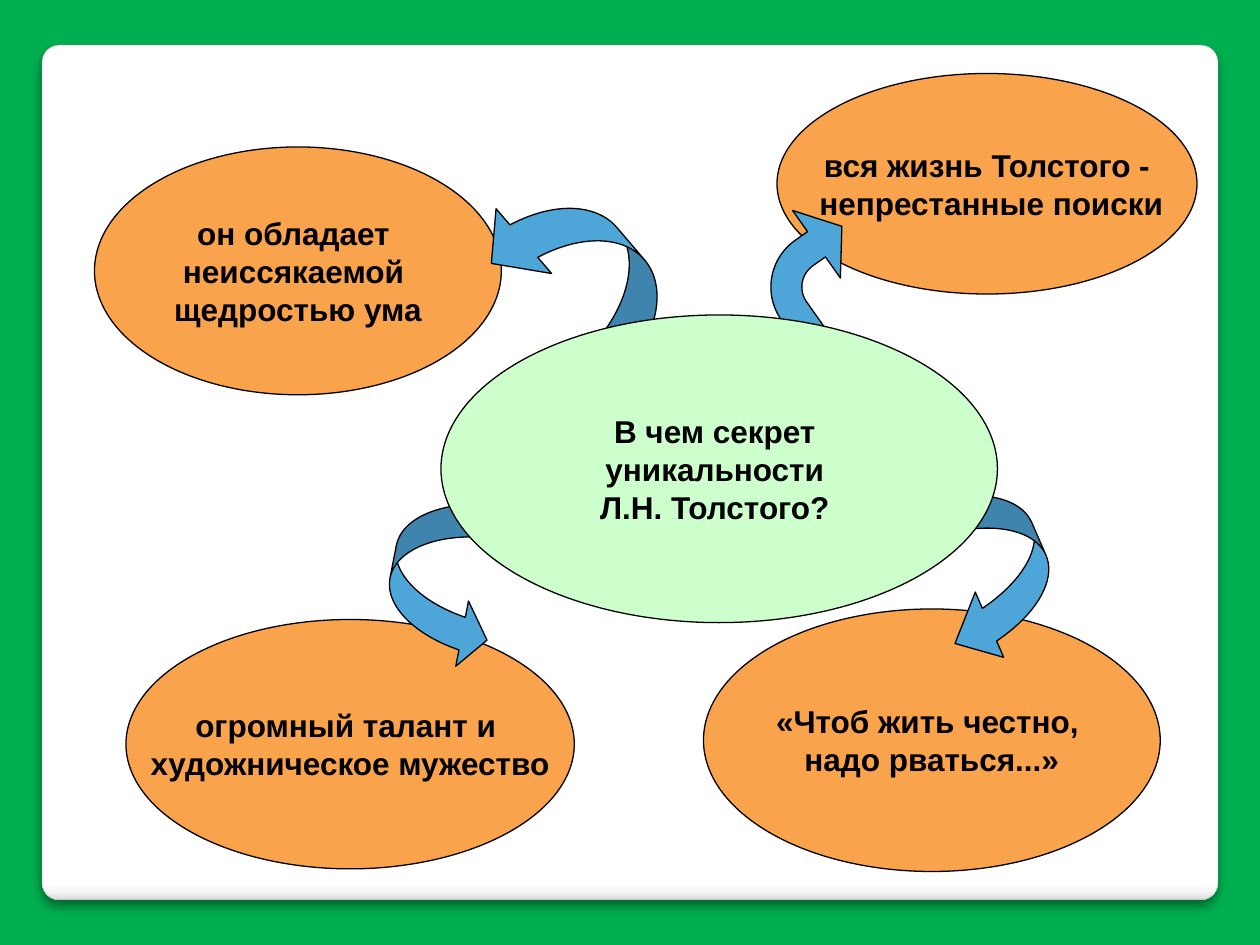
import pptx
import pptx.util
import pptx.oxml
import pptx.oxml.ns
import pptx.dml.color
import pptx.enum.shapes
import pptx.enum.text

THEME = {
    "background": "00B050",
    "card_line": "A4A4A4",
    "card_stops": [(0, "FFFFFF"), (98, "FFFFFF"), (99, "F7F7F7"), (100, "DADADA")],
    "answer": "F9A34D",
    "question": "CCFFCC",
    "arrow": "4EA5D8",
    "ink": "000000",
    "font": "Arial",
    "text_size": 18,
    "line_width": 0.75,
}
COLUMNS, ROWS = 120, 90
SHAPES = pptx.enum.shapes.MSO_SHAPE
color = pptx.dml.color.RGBColor.from_string

presentation = pptx.Presentation()
presentation.slide_width = pptx.util.Inches(10)
presentation.slide_height = pptx.util.Inches(7.5)
slide = presentation.slides.add_slide(presentation.slide_layouts[6])
slide.background.fill.solid()
slide.background.fill.fore_color.rgb = color(THEME["background"])


def add_figure(kind, box, fill, line=THEME["ink"], width=THEME["line_width"], adjustments=(), rotation=0):
    column, row, columns, rows = box
    column_width = presentation.slide_width / COLUMNS
    row_height = presentation.slide_height / ROWS
    shape = slide.shapes.add_shape(
        kind, int(column * column_width), int(row * row_height),
        int(columns * column_width), int(rows * row_height))
    shape.shadow.inherit = False
    shape.fill.solid()
    shape.fill.fore_color.rgb = color(fill)
    shape.line.color.rgb = color(line)
    shape.line.width = pptx.util.Pt(width)
    shape.rotation = rotation
    for index, value in enumerate(adjustments):
        shape.adjustments[index] = value
    return shape


def write_lines(text, shape, size=THEME["text_size"], ink=THEME["ink"], bold=True):
    frame = shape.text_frame
    frame.word_wrap = False
    frame.vertical_anchor = pptx.enum.text.MSO_ANCHOR.MIDDLE
    frame.text = text
    for paragraph in frame.paragraphs:
        paragraph.alignment = pptx.enum.text.PP_ALIGN.CENTER
        font = paragraph.runs[0].font
        font.name = THEME["font"]
        font.size = pptx.util.Pt(size)
        font.bold = bold
        font.color.rgb = color(ink)


card = add_figure(SHAPES.ROUNDED_RECTANGLE, (4, 4.3, 112, 81.4), "FFFFFF",
                  line=THEME["card_line"], width=0.16, adjustments=[0.02])
card.fill.gradient()
card.fill.gradient_angle = 270
namespace = pptx.oxml.ns.nsdecls("a")
stop_list = card.element.spPr.find(".//" + pptx.oxml.ns.qn("a:gsLst"))
for stop in list(stop_list):
    stop_list.remove(stop)
for position, stop_color in THEME["card_stops"]:
    stop_list.append(pptx.oxml.parse_xml(
        f'<a:gs {namespace} pos="{position * 1000}"><a:srgbClr val="{stop_color}"/></a:gs>'))
effects = card.element.spPr.find(pptx.oxml.ns.qn("a:effectLst"))
effects.append(pptx.oxml.parse_xml(
    f'<a:outerShdw {namespace} blurRad="{pptx.util.Pt(6)}" dist="{pptx.util.Pt(4)}" '
    f'dir="5400000" algn="t" rotWithShape="0"><a:srgbClr val="{THEME["ink"]}">'
    '<a:alpha val="44000"/></a:srgbClr></a:outerShdw>'))

answers = [
    ("огромный талант и \nхудожническое мужество", (12, 59, 42.7, 23.75),
     SHAPES.CURVED_UP_ARROW, (34.3, 50.15, 16, 10.2), 101, [0.31, 0.62, 0.24]),
    ("вся жизнь Толстого -\n непрестанные поиски", (74, 7, 40, 21),
     SHAPES.BENT_ARROW, (73, 19.9, 9.85, 14), 324.7, [0.3, 0.4, 0.3, 0.55]),
    ("он обладает \nнеиссякаемой \nщедростью ума", (9, 14, 38.75, 23.6),
     SHAPES.CURVED_RIGHT_ARROW, (49.45, 15.85, 11.3, 20.5), 139.4, [0.36, 0.72, 0.33]),
    ("«Чтоб жить честно, \nнадо рваться...»", (67, 58, 43.5, 25),
     SHAPES.CURVED_LEFT_ARROW, (88.45, 45.85, 11.3, 17), 336.5, [0.3, 0.6, 0.33]),
]
for text, answer_box, arrow_kind, arrow_box, rotation, adjustments in answers:
    answer = add_figure(SHAPES.OVAL, answer_box, THEME["answer"])
    write_lines(text, answer)
    add_figure(arrow_kind, arrow_box, THEME["arrow"], adjustments=adjustments, rotation=rotation)

question = add_figure(SHAPES.OVAL, (42, 30, 53, 29.3), THEME["question"])
write_lines("В чем секрет \nуникальности \nЛ.Н. Толстого? ", question)

presentation.save("out.pptx")
